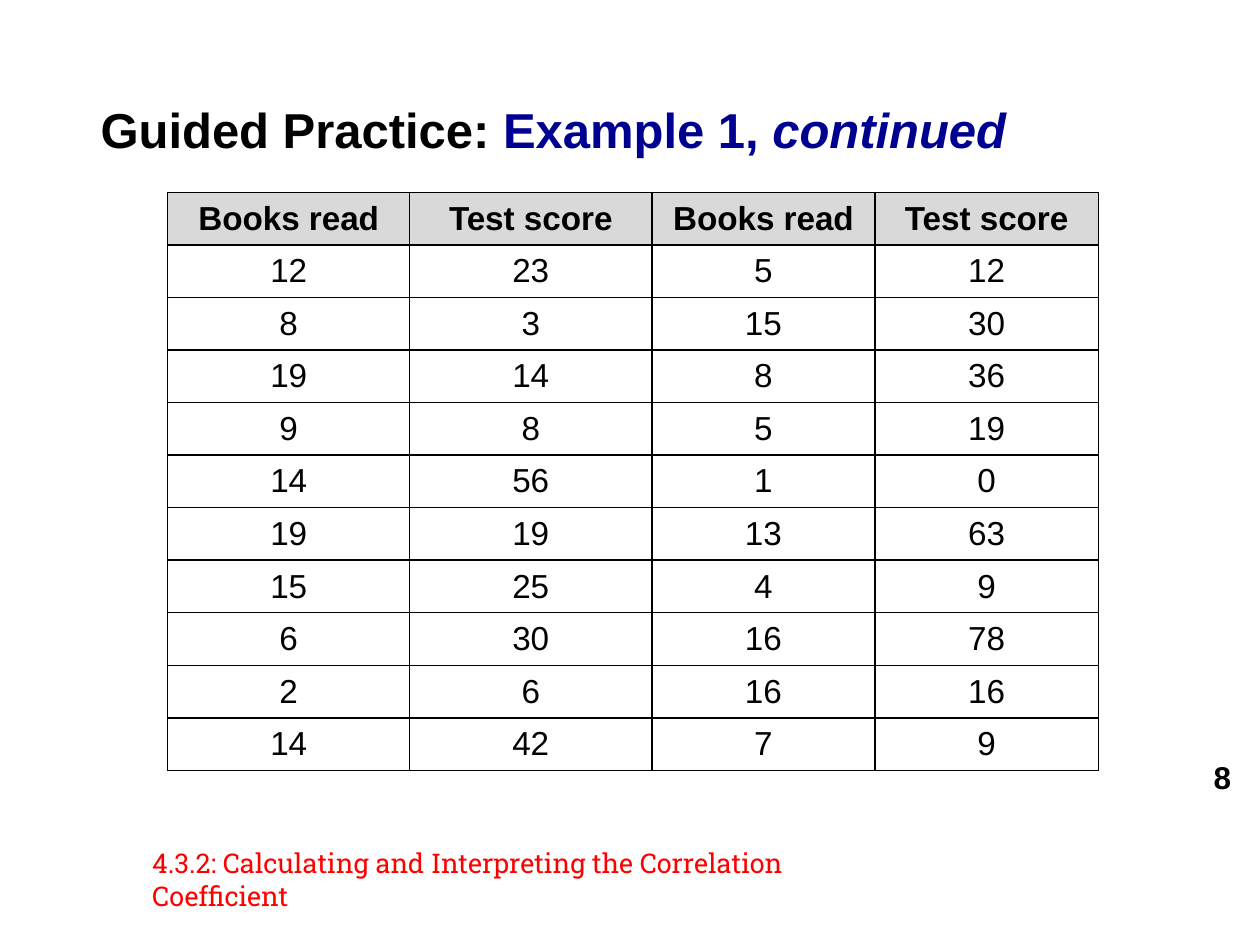
from dataclasses import dataclass

from lxml.etree import SubElement
from pptx import Presentation
from pptx.dml.color import RGBColor
from pptx.enum.text import MSO_ANCHOR as Anchor, PP_ALIGN as Align
from pptx.oxml.ns import qn
from pptx.util import Cm, Pt


@dataclass(frozen=True)
class Theme:
    black: str = "000000"
    navy: str = "000090"
    red: str = "FF0000"
    white: str = "FFFFFF"
    header_grey: str = "D9D9D9"
    body_font: str = "Arial"
    footer_font: str = "Roboto Slab"
    title_size: float = 28
    table_size: float = 19
    number_size: float = 18
    footer_size: float = 15.5


theme = Theme()


def format_run(run, size, color=theme.black, bold=False, font=theme.body_font):
    run.font.name = font
    run.font.size = Pt(size)
    run.font.bold = bold
    run.font.color.rgb = RGBColor.from_string(color)


def add_text_frame(slide, left, top, width, height, anchor=Anchor.MIDDLE):
    box = slide.shapes.add_textbox(Cm(left), Cm(top), Cm(width), Cm(height))
    box.text_frame.word_wrap = True
    box.text_frame.vertical_anchor = anchor
    return box.text_frame


presentation = Presentation()
presentation.slide_width = Cm(25.4)
presentation.slide_height = Cm(19.05)
slide = presentation.slides.add_slide(presentation.slide_layouts[6])

# Title
title = add_text_frame(slide, 1.78, 1.78, 21.82, 13.89, Anchor.TOP)
title.margin_top = Cm(0.23)
for text, color, italic in (
    ("Guided Practice: ", theme.black, False),
    ("Example 1, ", theme.navy, False),
    ("continued", theme.navy, True),
):
    run = title.paragraphs[0].add_run()
    run.text = text
    format_run(run, theme.title_size, color, bold=True)
    run.font.italic = italic

# Page number
number = add_text_frame(slide, 23.04, 15.27, 2.03, 0.79)
number.text = "8"
number.paragraphs[0].alignment = Align.RIGHT
format_run(number.paragraphs[0].runs[0], theme.number_size, bold=True)

# Footer
footer = add_text_frame(slide, 2.82, 17.35, 15.47, 0.74)
footer.text = "4.3.2: Calculating and Interpreting the Correlation Coefficient"
format_run(footer.paragraphs[0].runs[0], theme.footer_size, theme.red,
           font=theme.footer_font)

# Table of books read and test scores
rows = [
    ("Books read", "Test score") * 2,
    (12, 23, 5, 12),
    (8, 3, 15, 30),
    (19, 14, 8, 36),
    (9, 8, 5, 19),
    (14, 56, 1, 0),
    (19, 19, 13, 63),
    (15, 25, 4, 9),
    (6, 30, 16, 78),
    (2, 6, 16, 16),
    (14, 42, 7, 9),
]
column_widths = (4.88, 4.88, 4.5, 4.5)
row_height = 1.03
table = slide.shapes.add_table(
    len(rows), len(column_widths), Cm(3.38), Cm(3.88),
    Cm(sum(column_widths)), Cm(row_height * len(rows))).table
table.first_row = False
table.horz_banding = False
for column, width in zip(table.columns, column_widths):
    column.width = Cm(width)

for row_index, values in enumerate(rows):
    is_header = row_index == 0
    table.rows[row_index].height = Cm(row_height)
    for column_index, value in enumerate(values):
        cell = table.cell(row_index, column_index)
        cell.text = str(value)
        cell.vertical_anchor = Anchor.MIDDLE
        paragraph = cell.text_frame.paragraphs[0]
        paragraph.alignment = Align.CENTER
        format_run(paragraph.runs[0], theme.table_size, bold=is_header)

        # Borders go before the fill in the cell properties
        properties = cell._tc.get_or_add_tcPr()
        for side in ("a:lnL", "a:lnR", "a:lnT", "a:lnB"):
            line = SubElement(properties, qn(side), w=str(Pt(1)))
            line_fill = SubElement(line, qn("a:solidFill"))
            SubElement(line_fill, qn("a:srgbClr"), val=theme.black)
        cell.fill.solid()
        cell.fill.fore_color.rgb = RGBColor.from_string(
            theme.header_grey if is_header else theme.white)

presentation.save("out.pptx")
